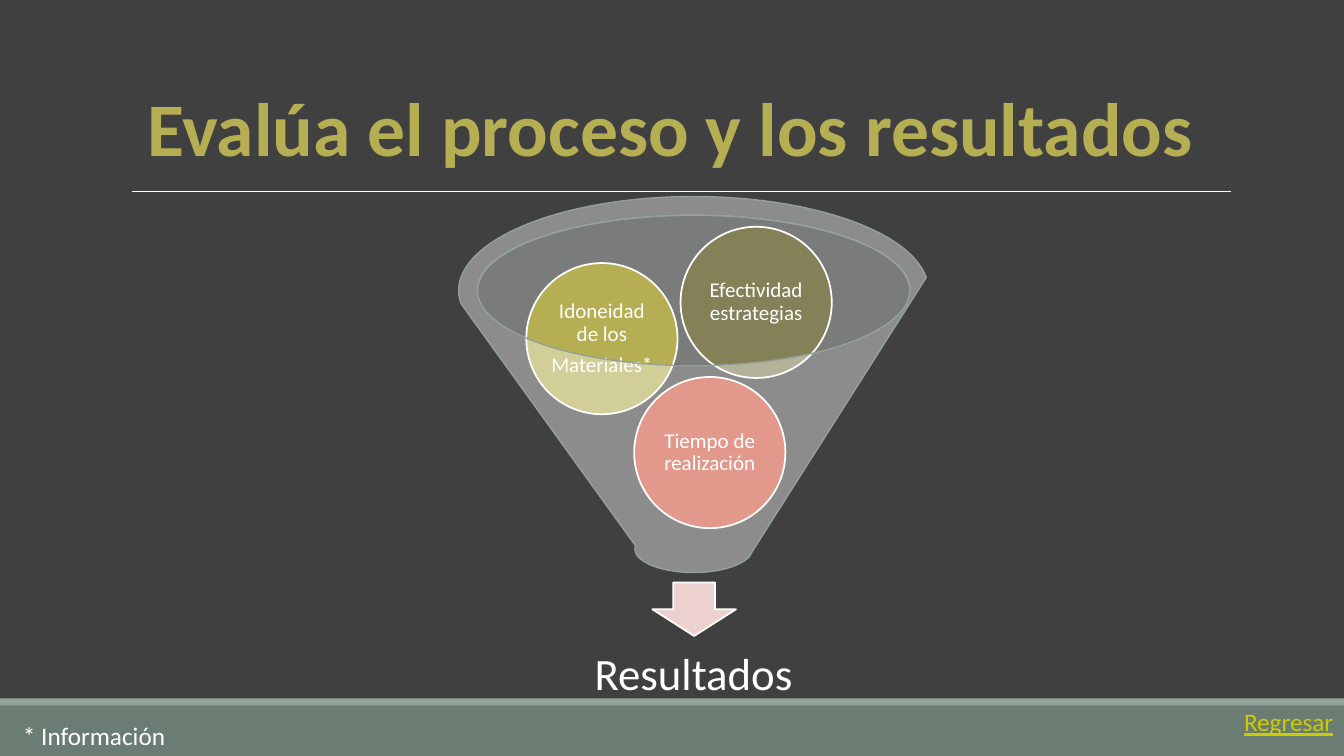
from lxml import etree
from pptx import Presentation
from pptx.dml.color import RGBColor
from pptx.enum.shapes import MSO_CONNECTOR, MSO_SHAPE
from pptx.enum.text import MSO_ANCHOR, MSO_AUTO_SIZE, PP_ALIGN
from pptx.oxml.ns import qn
from pptx.util import Emu, Pt

EMU_PER_PX = 9144
STRAIGHT = MSO_CONNECTOR.STRAIGHT
RECTANGLE, ELLIPSE = MSO_SHAPE.RECTANGLE, MSO_SHAPE.OVAL
FUNNEL, DOWN_ARROW = MSO_SHAPE.FUNNEL, MSO_SHAPE.DOWN_ARROW
LEFT, CENTER = PP_ALIGN.LEFT, PP_ALIGN.CENTER
TOP, MIDDLE = MSO_ANCHOR.TOP, MSO_ANCHOR.MIDDLE
NO_AUTOFIT = MSO_AUTO_SIZE.NONE
TITLE_ONLY_LAYOUT = 5

FONT = "Calibri"
WHITE, OLIVE, SAGE = "FFFFFF", "B5AE53", "93A299"


def px(length):
    return Emu(length * EMU_PER_PX)


def color(hex_string):
    return RGBColor.from_string(hex_string)


class SlideBuilder:
    """Holds the text style and the slide being built."""

    def __init__(self, slide, background):
        self.slide = slide
        self.font = FONT
        fill = slide.background.fill
        fill.solid()
        fill.fore_color.rgb = color(background)

    def set_text(self, shape, lines, size, text_color=WHITE, align=CENTER,
                 anchor=MIDDLE, margin=None, wrap=True, spacing=None,
                 bold=False, underline=False):
        """Set the lines of a shape; spacing is (line factor, points after)."""
        frame = shape.text_frame
        frame.text = "\n".join(lines)
        frame.auto_size = NO_AUTOFIT
        frame.word_wrap = wrap
        frame.vertical_anchor = anchor
        if margin is not None:
            frame.margin_left = frame.margin_right = px(margin)
            frame.margin_top = frame.margin_bottom = px(margin)
        for paragraph in frame.paragraphs:
            paragraph.alignment = align
            if spacing:
                paragraph.line_spacing = spacing[0]
                paragraph.space_after = Pt(spacing[1])
            for run in paragraph.runs:
                run.font.name = self.font
                run.font.size = Pt(size)
                run.font.bold = bold
                run.font.underline = underline
                run.font.color.rgb = color(text_color)

    def title(self, text, left, top, width, height):
        shape = self.slide.shapes.title
        shape.left, shape.top = px(left), px(top)
        shape.width, shape.height = px(width), px(height)
        self.set_text(shape, [text], 54, OLIVE, anchor=TOP, wrap=False, bold=True)

    def text(self, lines, left, top, width, height, size, **style):
        box = self.slide.shapes.add_textbox(px(left), px(top), px(width), px(height))
        self.set_text(box, lines, size, **style)

    def shape(self, kind, left, top, width, height, fill, line=None,
              line_width=1.25, opacity=None):
        shape = self.slide.shapes.add_shape(
            kind, px(left), px(top), px(width), px(height))
        shape.shadow.inherit = False
        shape.fill.solid()
        shape.fill.fore_color.rgb = color(fill)
        if opacity is not None:
            fill_color = shape._element.spPr.find(qn("a:solidFill"))[0]
            etree.SubElement(fill_color, qn("a:alpha"), val=str(opacity * 1000))
        if line:
            shape.line.color.rgb = color(line)
            shape.line.width = Pt(line_width)
        else:
            shape.line.fill.background()
        return shape

    def rule(self, left, right, y, line, width):
        connector = self.slide.shapes.add_connector(
            STRAIGHT, px(left), px(y), px(right), px(y))
        connector.line.color.rgb = color(line)
        connector.line.width = Pt(width)
        etree.SubElement(connector._element.spPr, qn("a:effectLst"))

    def ball(self, lines, left, top, fill):
        """Add one labelled circle of the funnel."""
        circle = self.shape(ELLIPSE, left, top, 150, 150, fill, WHITE)
        self.set_text(circle, lines, 15, margin=2, spacing=(0.9, 6))


def main():
    presentation = Presentation()
    presentation.slide_width, presentation.slide_height = px(1333), px(750)
    layout = presentation.slide_layouts[TITLE_ONLY_LAYOUT]
    builder = SlideBuilder(presentation.slides.add_slide(layout), "404040")

    builder.rule(131, 1221, 190, WHITE, 0.5)
    builder.shape(RECTANGLE, 0, 700, 1333, 50, "6B7D72")
    builder.shape(RECTANGLE, 0, 693, 1333, 7, SAGE)
    builder.title("Evalúa el proceso y los resultados", 131, 75, 1068, 101)

    builder.shape(ELLIPSE, 473, 213, 430, 149, "D2D7D4", opacity=40)
    builder.shape(DOWN_ARROW, 647, 578, 83, 53, "EDD1CF", WHITE)
    builder.text(["Resultados"], 488, 621, 400, 100, 32, margin=25,
                 spacing=(0.9, 11))
    for lines, left, top, fill in (
        (["Tiempo de realización"], 629, 374, "CF543F"),
        (["Idoneidad de los", "Materiales*"], 522, 261, OLIVE),
        (["Efectividad estrategias"], 675, 225, "848058"),
    ):
        builder.ball(lines, left, top, fill)
    builder.shape(FUNNEL, 455, 195, 466, 373, WHITE, SAGE, 1, opacity=40)

    builder.text(["* Información"], 13, 710, 163, 40, 18, align=LEFT,
                 anchor=TOP, wrap=False)
    builder.text(["Regresar"], 1224, 696, 110, 40, 18, text_color="CCCC00",
                 align=LEFT, anchor=TOP, wrap=False, underline=True)

    presentation.save("out.pptx")


if __name__ == "__main__":
    main()
